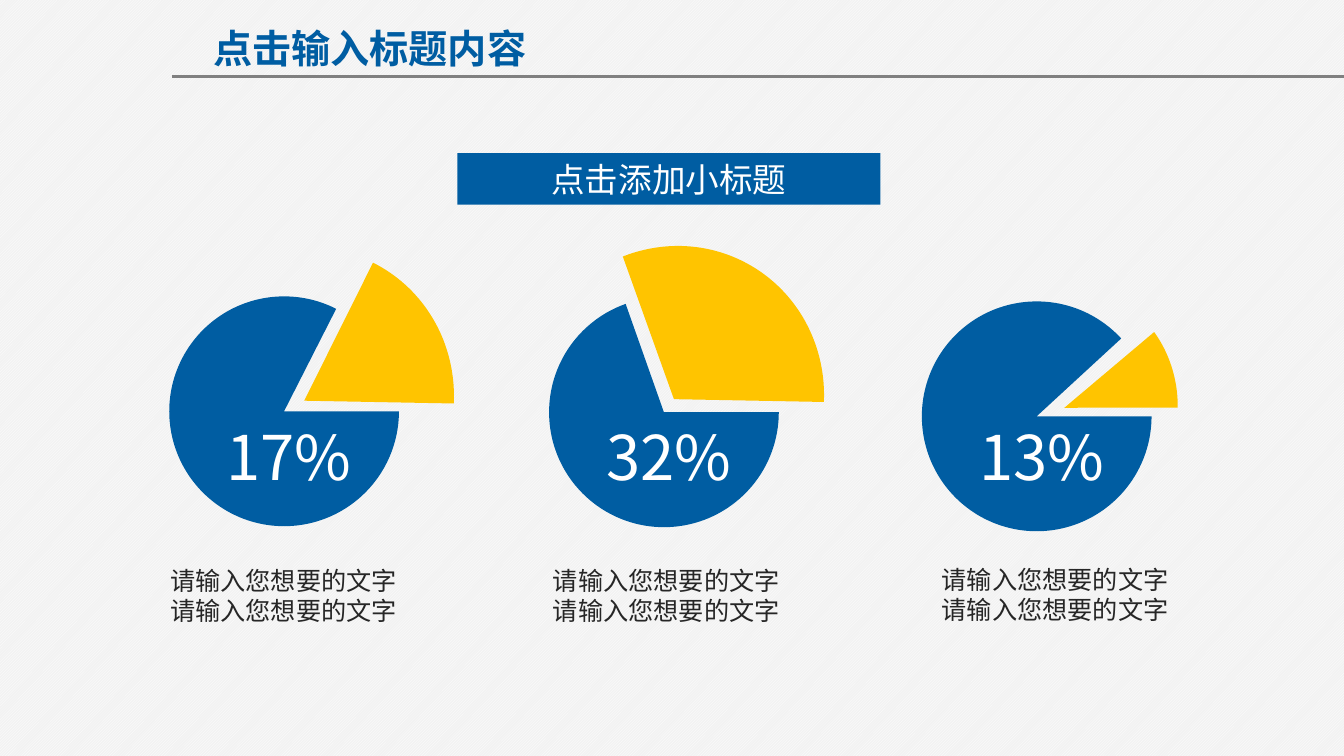
from lxml import etree
from pptx import Presentation
from pptx import util as u
from pptx.dml.color import RGBColor
from pptx.enum import dml, shapes, text
from pptx.oxml.ns import qn

PX = 9144
SANS = "Noto Sans CJK SC"
COLORS = {
    "blue": "005DA2", "yellow": "FFC400", "grey": "808080",
    "ink": "262626", "white": "FFFFFF", "paper": "F2F2F2",
}
rgb = {name: RGBColor.from_string(value) for name, value in COLORS.items()}


def write(sp, lines, size, color, bold=False, align=text.PP_ALIGN.LEFT,
          anchor=text.MSO_ANCHOR.TOP):
    tf = sp.text_frame
    tf.word_wrap = True
    tf.auto_size = text.MSO_AUTO_SIZE.NONE
    tf.vertical_anchor = anchor
    tf.margin_left = tf.margin_right = 10 * PX
    tf.margin_top = tf.margin_bottom = 5 * PX
    for i, line in enumerate(lines):
        p = tf.add_paragraph() if i else tf.paragraphs[0]
        p.alignment = align
        r = p.add_run()
        r.text = line
        r.font.size, r.font.bold, r.font.name = u.Pt(size), bold, SANS
        r.font.color.rgb = rgb[color]
        ea = etree.SubElement(r.font._element, qn("a:ea"))
        ea.set("typeface", SANS)


def add_filled(kind, box, color):
    sp = s.shapes.add_shape(kind, *[n * PX for n in box])
    sp.shadow.inherit = False
    sp.fill.solid()
    sp.fill.fore_color.rgb = rgb[color]
    sp.line.fill.background()
    return sp


prs = Presentation()
prs.slide_width, prs.slide_height = 1334 * PX, 750 * PX
s = prs.slides.add_slide(prs.slide_layouts[5])

fill = s.background.fill
fill.patterned()
fill.pattern = dml.MSO_PATTERN.LIGHT_UPWARD_DIAGONAL
fill.fore_color.rgb = rgb["white"]
fill.back_color.rgb = rgb["paper"]

title = s.shapes.title
title.left, title.top, title.width, title.height = [n * PX for n in (187, 19, 360, 57)]
write(title, ["点击输入标题内容"], 28, "blue", bold=True, align=text.PP_ALIGN.CENTER)

rule = s.shapes.add_connector(shapes.MSO_CONNECTOR.STRAIGHT, 171 * PX, 76 * PX, 1334 * PX, 76 * PX)
rule.line.color.rgb = rgb["grey"]
rule.line.width = u.Pt(2)
etree.SubElement(rule._element.spPr, qn("a:effectLst"))

subtitle = add_filled(shapes.MSO_SHAPE.RECTANGLE, (454, 152, 420, 51), "blue")
write(subtitle, ["点击添加小标题"], 24, "white", align=text.PP_ALIGN.CENTER,
      anchor=text.MSO_ANCHOR.MIDDLE)

pies = [
    ("17%", (168, 294, 228, 228), 296.96, (149, 250, 306, 295), 296.5, (0, 64.56),
     (215, 411, 166, 84), (159, 556, 259, 71)),
    ("32%", (545, 295, 228, 228), 250.53, (516, 248, 306, 296), 296.5, (313.78, 64.56),
     (592, 411, 184, 84), (539, 556, 257, 71)),
    ("13%", (915, 299, 228, 228), 317.38, (935, 292, 243, 225), 273.9, (45.97, 86.04),
     (962, 411, 169, 84), (925, 555, 254, 71)),
]
for share, disc_box, disc_end, slice_box, turn, slice_angles, share_box, caption_box in pies:
    for box, color, rotation, angles in (
        (disc_box, "blue", 0, (0, disc_end)),
        (slice_box, "yellow", turn, slice_angles),
    ):
        sp = add_filled(shapes.MSO_SHAPE.PIE, box, color)
        sp.rotation = rotation
        for i, angle in enumerate(angles):
            sp.adjustments[i] = angle * 0.6
    for box, lines, size, color in (
        (share_box, [share], 44, "white"),
        (caption_box, ["请输入您想要的文字"] * 2, 18, "ink"),
    ):
        write(s.shapes.add_textbox(*[n * PX for n in box]), lines, size, color)

prs.save("out.pptx")
